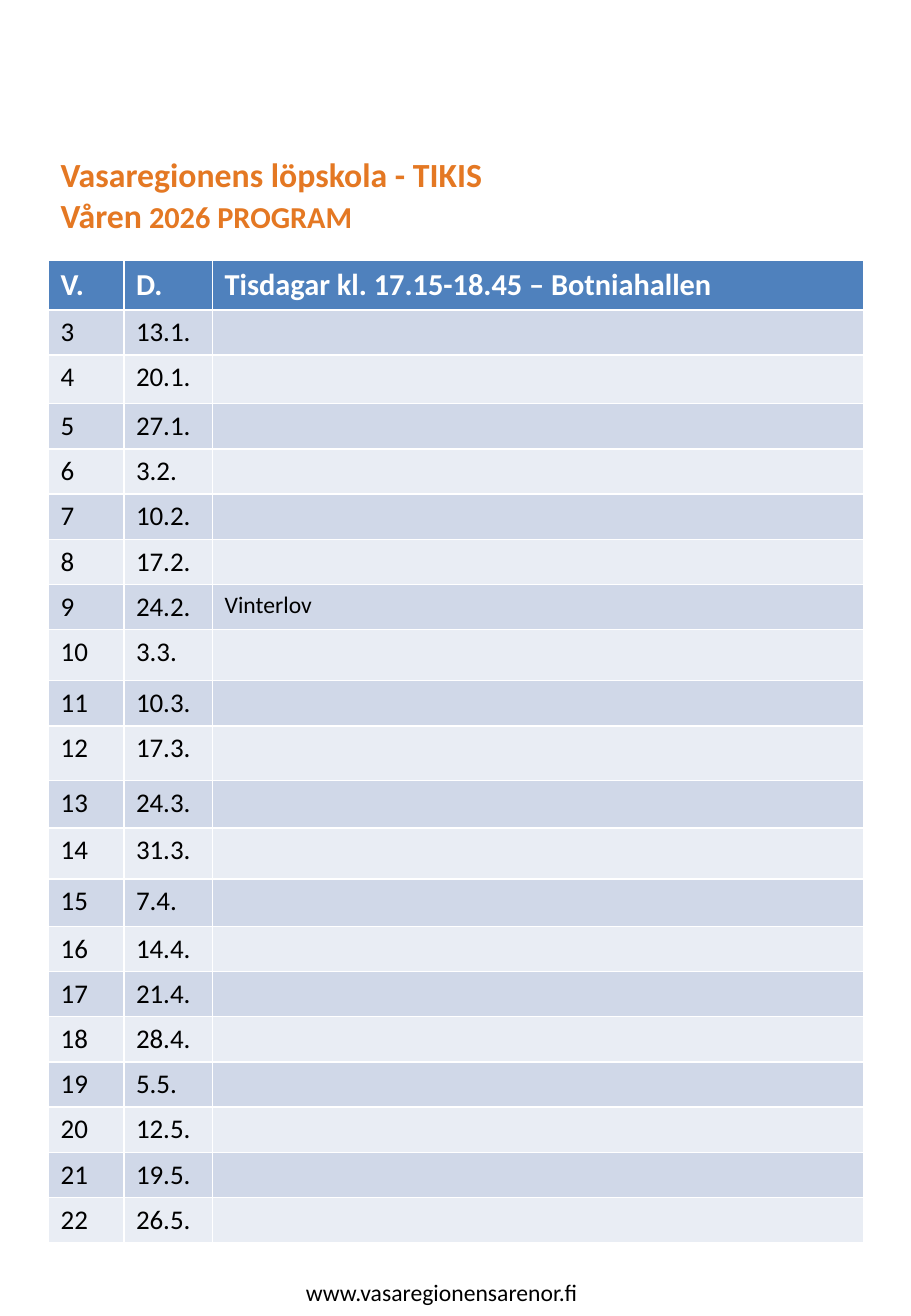
from pptx import Presentation
from pptx.dml.color import RGBColor
from pptx.enum.text import MSO_AUTO_SIZE
from pptx.oxml.ns import qn
from pptx.util import Inches, Pt
from lxml.etree import SubElement

HEADER = ["V.", "D.", "Tisdagar kl. 17.15-18.45 – Botniahallen"]
DATES = ["13.1.", "20.1.", "27.1.", "3.2.", "10.2.", "17.2.", "24.2.", "3.3.", "10.3.", "17.3.",
         "24.3.", "31.3.", "7.4.", "14.4.", "21.4.", "28.4.", "5.5.", "12.5.", "19.5.", "26.5."]
NOTES = {9: "Vinterlov"}
FIRST_WEEK = 3
COLUMN_WIDTHS = [0.62, 0.73, 5.36]
ROW_HEIGHT = 0.37
TALL_ROWS = {0: 0.41, 2: 0.4, 8: 0.42, 10: 0.45, 11: 0.39, 12: 0.42, 13: 0.39}
HEADER_FILL, BANDS = "4F81BD", ["E9EDF4", "D0D8E8"]


def add_run(p, text, size, color, bold=False):
    r = p.add_run()
    r.text = text
    r.font.color.rgb = RGBColor.from_string(color)
    for name, value in {"name": "Calibri", "size": Pt(size), "bold": bold}.items():
        setattr(r.font, name, value)


def add_text(s, left, top, width, height, wrap):
    """Add a text box that grows with its text and return its first paragraph."""
    tf = s.shapes.add_textbox(Inches(left), Inches(top), Inches(width), Inches(height)).text_frame
    tf.word_wrap = wrap
    tf.auto_size = MSO_AUTO_SIZE.SHAPE_TO_FIT_TEXT
    return tf.paragraphs[0]


prs = Presentation()
prs.slide_width, prs.slide_height = Inches(7.5), Inches(10.83)
s = prs.slides.add_slide(prs.slide_layouts[6])

# Programme table
rows = [HEADER]
for week, date in enumerate(DATES, FIRST_WEEK):
    rows.append([str(week), date, NOTES.get(week, "")])
heights = [TALL_ROWS.get(i, ROW_HEIGHT) for i in range(len(rows))]
table = s.shapes.add_table(len(rows), len(HEADER), Inches(0.4), Inches(2.14),
                           Inches(sum(COLUMN_WIDTHS)), Inches(sum(heights))).table
for column, width in zip(table.columns, COLUMN_WIDTHS):
    column.width = Inches(width)
for i, texts in enumerate(rows):
    table.rows[i].height = Inches(heights[i])
    for j, text in enumerate(texts):
        cell = table.cell(i, j)
        cell.fill.solid()
        cell.fill.fore_color.rgb = RGBColor.from_string(BANDS[i % 2] if i else HEADER_FILL)
        p = cell.text_frame.paragraphs[0]
        if i == 0:
            add_run(p, text, 18, "FFFFFF", bold=True)
        elif text:
            add_run(p, text, 14 if j == 2 else 16, "000000")
        else:
            # An empty cell needs a small font so that its row stays low
            SubElement(p._p, qn("a:endParaRPr"), sz="1400")

# Title
p = add_text(s, 0.4, 1.22, 6.71, 0.77, wrap=True)
add_run(p, "Vasaregionens löpskola - TIKIS", 20, "E47823", bold=True)
p.add_line_break()
add_run(p, "Våren", 20, "E47823", bold=True)
add_run(p, " 2026 PROGRAM", 18, "E47823", bold=True)

# Web address
p = add_text(s, 2.42, 10.47, 2.46, 0.34, wrap=False)
add_run(p, "www.vasaregionensarenor.fi", 14, "000000")

prs.save("out.pptx")
